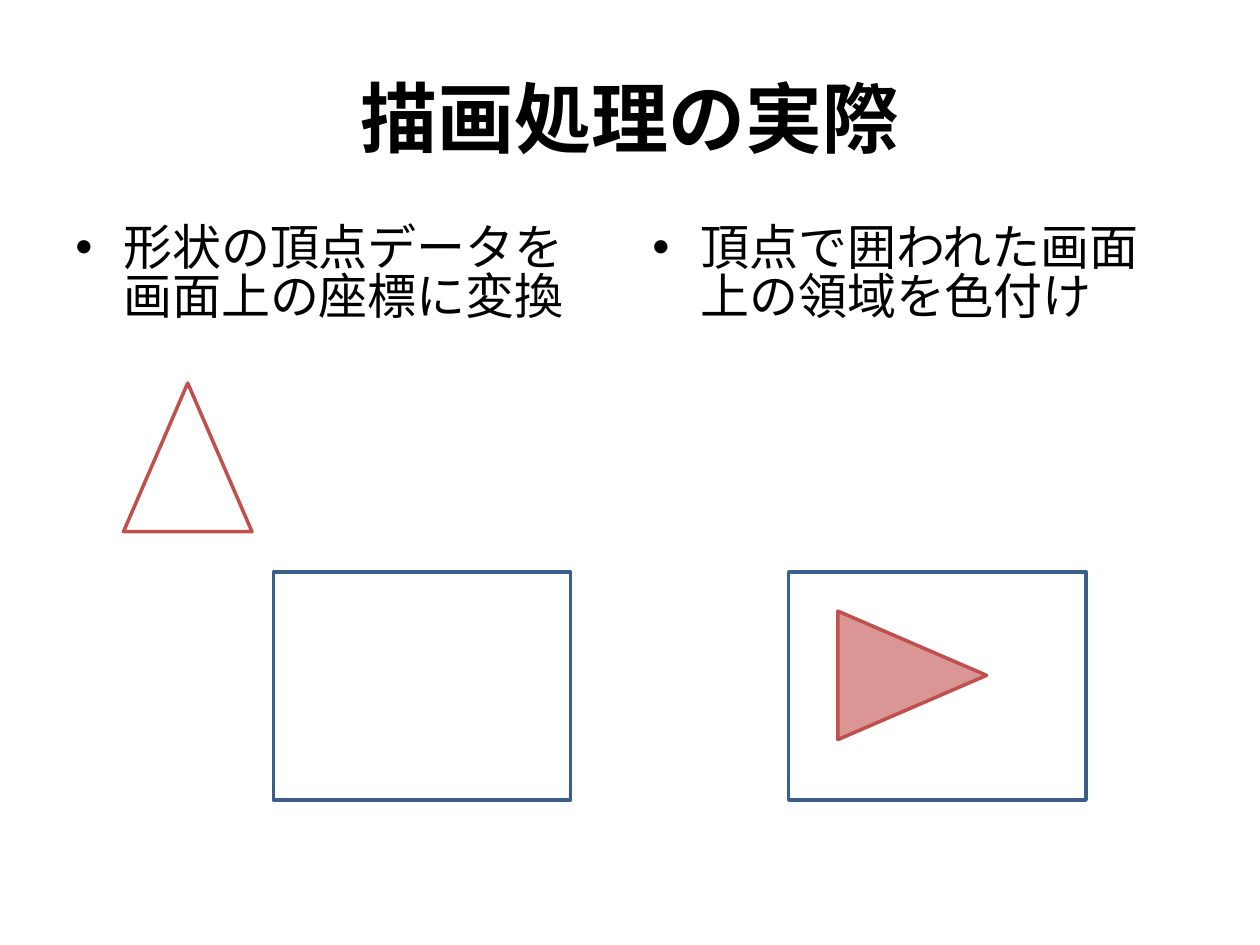
from pptx import Presentation
from pptx.dml.color import RGBColor
from pptx.enum.shapes import MSO_SHAPE as SHAPE
from pptx.enum.text import MSO_ANCHOR as ANCHOR, PP_ALIGN as ALIGN
from pptx.oxml.ns import qn
from pptx.util import Inches, Pt
from lxml.etree import SubElement

FONT = "Noto Sans CJK JP"
BLACK, WHITE, BLUE, RED, PINK = "000000", "FFFFFF", "3A5F8C", "C0504D", "D99694"


def color(value):
    return RGBColor.from_string(value)


def set_all(target, values):
    for name, value in values.items():
        setattr(target, name, value)


class Deck:
    """Holds the text and line style and the current slide."""

    def __init__(self, prs):
        self.s = prs.slides.add_slide(prs.slide_layouts[6])
        self.line_width = Pt(2)

    def text(self, box, text, font, para, anchor=ANCHOR.TOP):
        tf = self.s.shapes.add_textbox(*map(Inches, box)).text_frame
        set_all(tf, {"word_wrap": True, "vertical_anchor": anchor})
        p = tf.paragraphs[0]
        set_all(p, para)
        r = p.add_run()
        r.text = text
        set_all(r.font, {"name": FONT, **font})
        r.font.color.rgb = color(BLACK)
        SubElement(r.font._element, qn("a:ea"), typeface=FONT)
        return p

    def title(self, box, text):
        self.text(box, text, {"size": Pt(44), "bold": True},
                  {"alignment": ALIGN.CENTER}, ANCHOR.MIDDLE)

    def bullet(self, box, text):
        p = self.text(box, text, {"size": Pt(28)},
                      {"space_before": Pt(5.6), "line_spacing": 0.83})
        pPr = p._p.get_or_add_pPr()
        pPr.set("marL", str(Inches(0.38)))
        pPr.set("indent", str(Inches(-0.38)))
        SubElement(pPr, qn("a:buFont"), typeface="Arial")
        SubElement(pPr, qn("a:buChar"), char="•")

    def shape(self, kind, box, line, fill=None, rotation=0):
        sp = self.s.shapes.add_shape(kind, *map(Inches, box))
        sp.shadow.inherit = False
        sp.rotation = rotation
        if fill:
            sp.fill.solid()
            sp.fill.fore_color.rgb = color(fill)
        else:
            sp.fill.background()
        sp.line.color.rgb = color(line)
        sp.line.width = self.line_width

    def screen(self, left):
        self.shape(SHAPE.RECTANGLE, (left, 4.54, 2.36, 1.81), BLUE, WHITE)

    def triangle(self, left, top, **style):
        self.shape(SHAPE.ISOSCELES_TRIANGLE, (left, top, 1.02, 1.18), RED, **style)


def main():
    prs = Presentation()
    set_all(prs, {"slide_width": Inches(10), "slide_height": Inches(7.5)})
    deck = Deck(prs)
    deck.title((0.5, 0.3, 9, 1.25), "描画処理の実際")
    columns = [(0.5, "形状の頂点データを画面上の座標に変換"),
               (5.08, "頂点で囲われた画面上の領域を色付け")]
    for left, text in columns:
        deck.bullet((left, 1.75, 4.42, 4.95), text)
    deck.screen(2.17)
    deck.triangle(0.98, 3.04)
    deck.screen(6.26)
    deck.triangle(6.73, 4.77, fill=PINK, rotation=90)
    prs.save("out.pptx")


if __name__ == "__main__":
    main()
